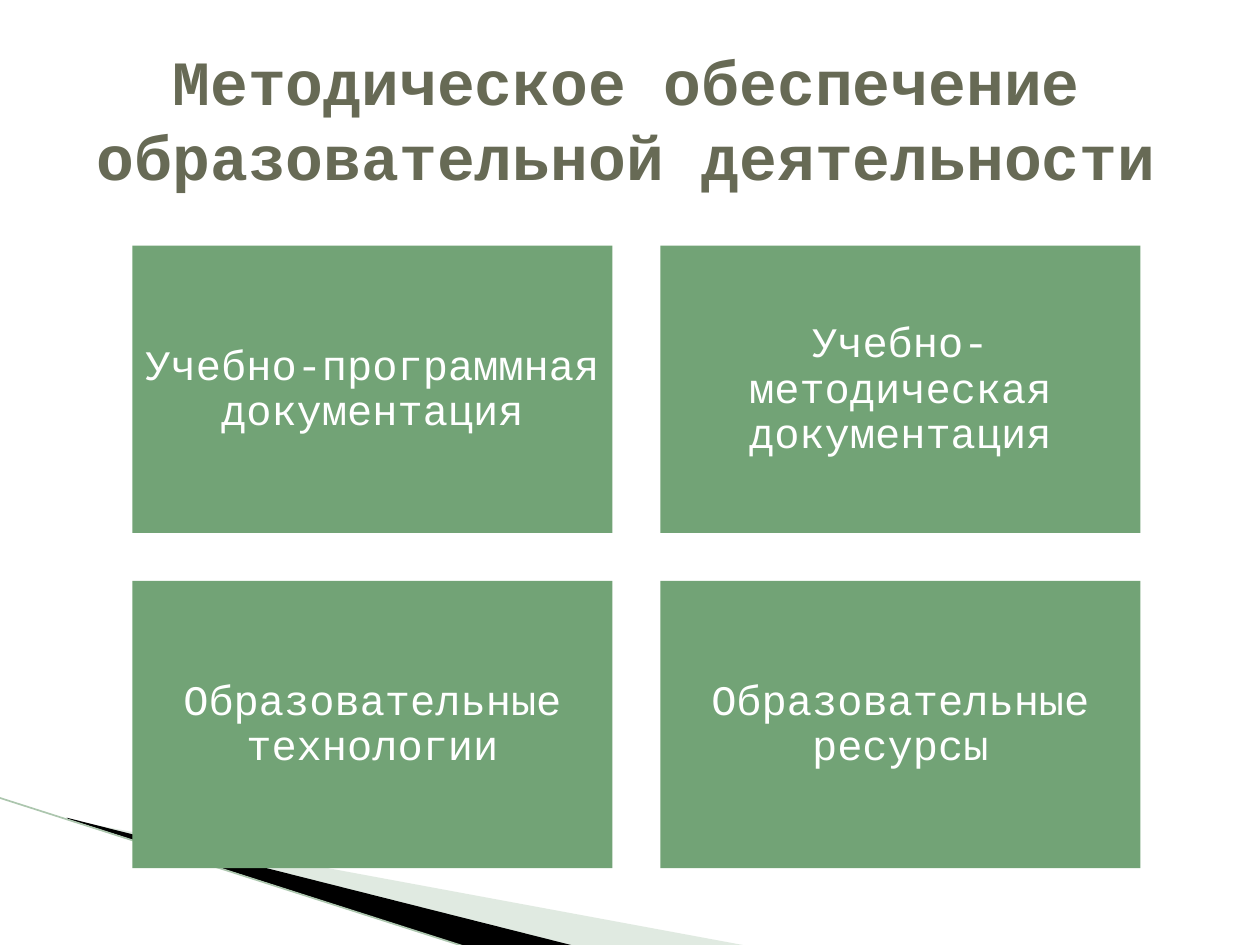
"""Build a title slide with a two-by-two grid of cards."""
from dataclasses import dataclass
from lxml import etree
from pptx import Presentation
from pptx.dml.color import RGBColor as Rgb
from pptx.enum import shapes, text
from pptx.oxml.ns import qn
from pptx.util import Inches, Pt


@dataclass
class Theme:
    font: str = "Courier New"
    head: Rgb = Rgb.from_string("676A55")
    card: Rgb = Rgb.from_string("72A376")
    label: Rgb = Rgb.from_string("FFFFFF")
    pale: Rgb = Rgb.from_string("B3CBB5")
    dark: Rgb = Rgb.from_string("000000")
    edge: Rgb = Rgb.from_string("ACC6AE")
    big: Pt = Pt(36)
    mid: Pt = Pt(24)


theme = Theme()


def paint(shape, color):
    shape.shadow.inherit = False
    shape.fill.solid()
    shape.fill.fore_color.rgb = color
    shape.line.fill.background()


def write(frame, words, size, color, bold):
    frame.word_wrap = True
    frame.auto_size = text.MSO_AUTO_SIZE.NONE
    frame.vertical_anchor = text.MSO_ANCHOR.MIDDLE
    par = frame.paragraphs[0]
    par.text = words
    par.alignment = text.PP_ALIGN.CENTER
    font = par.font
    font.name, font.size, font.bold = theme.font, size, bold
    font.color.rgb = color
    return par


deck = Presentation()
deck.slide_width, deck.slide_height = Inches(10), Inches(7.5)
slide = deck.slides.add_slide(deck.slide_layouts[5])
tree = slide.shapes

wedges = [
    (theme.pale, [(0.55, 6.51), (5.95, 7.51), (4.56, 7.51), (0.55, 6.5)]),
    (theme.dark, [(0.53, 6.49), (4.57, 7.51), (3.72, 7.52), (0.54, 6.5)]),
]
for color, points in wedges:
    start, *rest = [(Inches(x), Inches(y)) for x, y in points]
    pen = tree.build_freeform(*start)
    pen.add_line_segments(rest)
    wedge = pen.convert_to_shape()
    paint(wedge, color)
    if color == theme.pale:
        tint = wedge.fill._xPr.find(f".//{qn('a:srgbClr')}")
        etree.SubElement(tint, qn("a:alpha"), val="40000")

edge = tree.add_connector(
    shapes.MSO_CONNECTOR.STRAIGHT,
    Inches(-0.01), Inches(6.33), Inches(3.71), Inches(7.52))
edge.line.color.rgb = theme.edge
edge.line.width = Pt(0.95)
etree.SubElement(edge._element.spPr, qn("a:effectLst"))

labels = [
    "Учебно-программная документация",
    "Учебно-методическая документация",
    "Образовательные технологии",
    "Образовательные ресурсы",
]
wide, high, gap = 3.81, 2.28, 0.38
for i, label in enumerate(labels):
    row, col = divmod(i, 2)
    card = tree.add_shape(
        shapes.MSO_SHAPE.RECTANGLE,
        Inches(1.05 + col * (wide + gap)), Inches(1.95 + row * (high + gap)),
        Inches(wide), Inches(high))
    paint(card, theme.card)
    frame = card.text_frame
    frame.margin_left = frame.margin_right = Inches(0.1)
    frame.margin_top = frame.margin_bottom = Inches(0.1)
    par = write(frame, label, theme.mid, theme.label, False)
    par.line_spacing = 0.9

title = tree.title
title.left, title.top = Inches(0.47), Inches(0.31)
title.width, title.height = Inches(9), Inches(1.25)
write(title.text_frame, "Методическое обеспечение образовательной деятельности",
      theme.big, theme.head, True)

deck.save("out.pptx")
